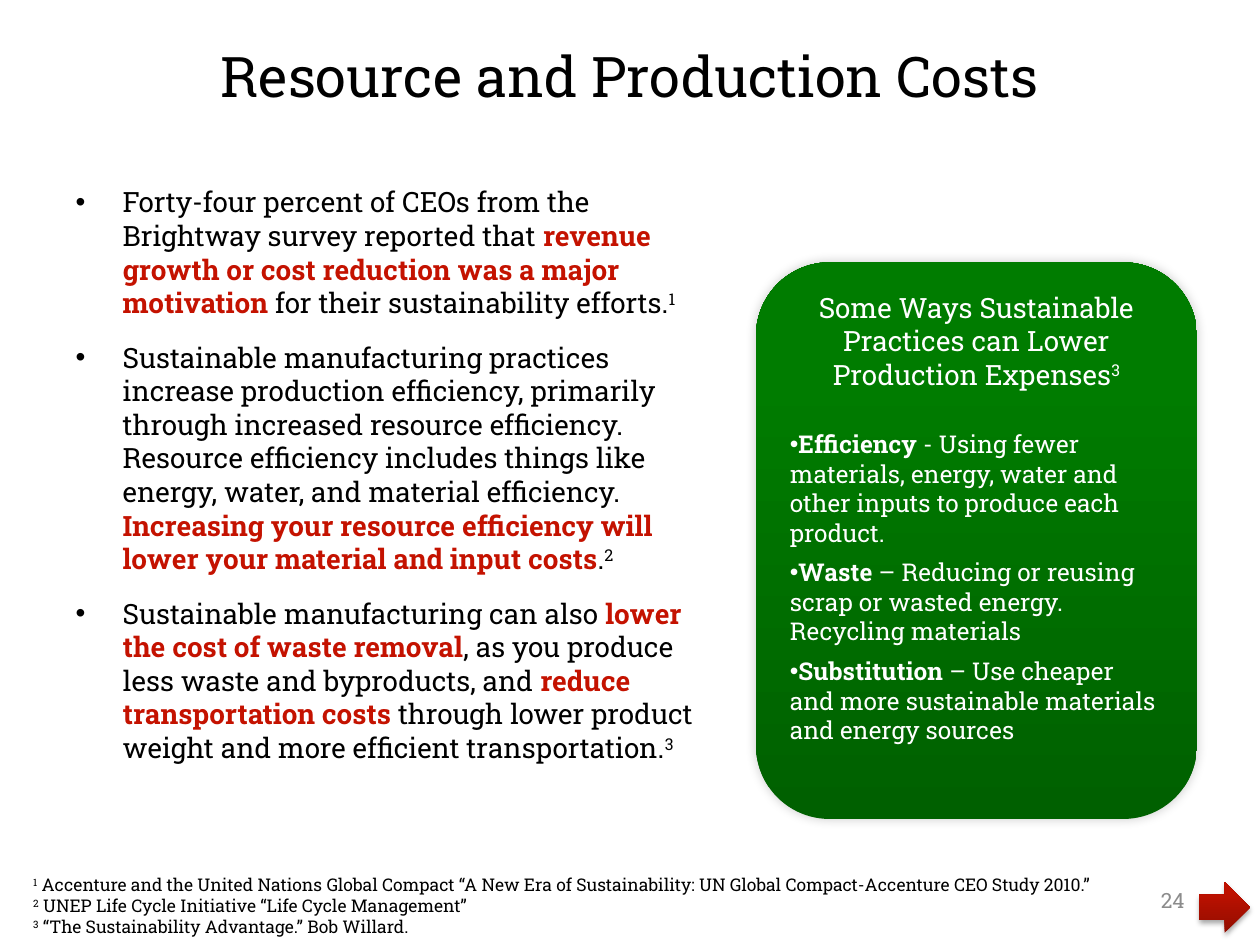
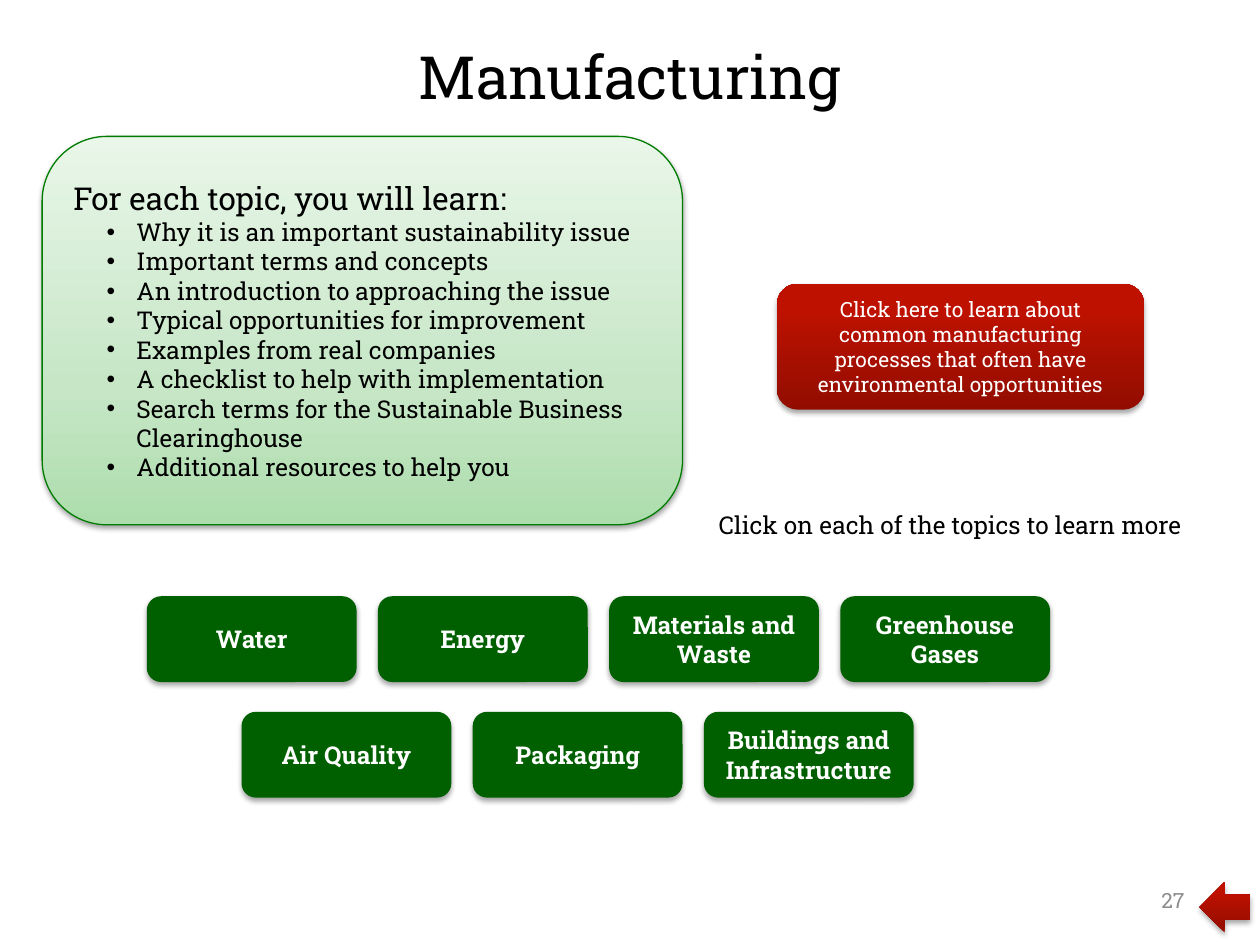
"""Build two slides on sustainable manufacturing: cost savings and a topic menu."""
from dataclasses import dataclass

from lxml import etree
from pptx import Presentation
from pptx.dml.color import RGBColor
from pptx.enum.shapes import MSO_SHAPE
from pptx.enum.text import MSO_ANCHOR, MSO_AUTO_SIZE, PP_ALIGN
from pptx.oxml.ns import qn
from pptx.util import Cm, Pt

LEFT, CENTER, RIGHT = PP_ALIGN.LEFT, PP_ALIGN.CENTER, PP_ALIGN.RIGHT
TOP, MIDDLE = MSO_ANCHOR.TOP, MSO_ANCHOR.MIDDLE
ROUNDED = MSO_SHAPE.ROUNDED_RECTANGLE
NEXT, BACK = MSO_SHAPE.RIGHT_ARROW, MSO_SHAPE.LEFT_ARROW
NO_AUTO_SIZE = MSO_AUTO_SIZE.NONE


@dataclass(frozen=True)
class Theme:
    font: str = "Roboto Slab"
    text: str = "000000"
    light: str = "FFFFFF"
    muted: str = "8C8C8C"
    accent: str = "C41200"
    button: str = "006000"
    outline: str = "007D00"
    red: tuple = ((0, "920D00"), (80, "BE1100"), (100, "BF1200"))
    green: tuple = ((0, "006000"), (80, "007C00"), (100, "007D00"))
    pale: tuple = ((0, "ADDDAD"), (35, "C6E6C6"), (100, "E9F6E9"))
    soft: tuple = (35, 3.1, 1.8, 90)
    glow: tuple = (20, 6, 0, 315)
    lead: int = 18
    body: int = 16
    label: int = 14
    small: int = 12
    note: int = 10


THEME = Theme()

COSTS_TITLE = "Resource and Production Costs"
COSTS_POINTS = [
    [("Forty-four percent of CEOs from the Brightway survey reported that ", ""),
     ("revenue growth or cost reduction was a major motivation", "key"),
     (" for their sustainability efforts.", ""), ("1", "raised")],
    [("Sustainable manufacturing practices increase production efficiency, "
      "primarily through increased resource efficiency. Resource efficiency "
      "includes things like energy, water, and material efficiency. ", ""),
     ("Increasing your resource efficiency will lower your material and input costs", "key"),
     (".", ""), ("2", "raised")],
    [("Sustainable manufacturing can also ", ""),
     ("lower the cost of waste removal", "key"),
     (", as you produce less waste and byproducts, and ", ""),
     ("reduce transportation costs ", "key"),
     ("through lower product weight and more efficient transportation.", ""),
     ("3", "raised")],
]
WAYS_HEADING = [("Some Ways Sustainable Practices can Lower Production Expenses", ""),
                ("3", "raised")]
WAYS = [
    ("Efficiency", " - Using fewer materials, energy, water and other inputs "
                   "to produce each product."),
    ("Waste", " – Reducing or reusing scrap or wasted energy. Recycling materials"),
    ("Substitution", " – Use cheaper and more sustainable materials and energy sources"),
]
SOURCES = [
    " Accenture and the United Nations Global Compact “A New Era of Sustainability: "
    "UN Global Compact-Accenture CEO Study 2010.”",
    " UNEP Life Cycle Initiative “Life Cycle Management”",
    " “The Sustainability Advantage.” Bob Willard.",
]

MENU_TITLE = "Manufacturing"
LEARN_HEADING = "For each topic, you will learn:"
LEARN_POINTS = [
    "Why it is an important sustainability issue",
    "Important terms and concepts",
    "An introduction to approaching the issue",
    "Typical opportunities for improvement",
    "Examples from real companies",
    "A checklist to help with implementation",
    "Search terms for the Sustainable Business Clearinghouse",
    "Additional resources to help you",
]
PROCESS_LINK = ("Click here to learn about common manufacturing processes "
                "that often have environmental opportunities")
TOPIC_HINT = "Click on each of the topics to learn more"
TOPIC_ROWS = [
    (2.96, ["Water", "Energy", "Materials and Waste", "Greenhouse Gases"]),
    (4.87, ["Air Quality", "Packaging", "Buildings and Infrastructure"]),
]
TOPIC_TOP, TOPIC_WIDTH, TOPIC_HEIGHT = 12.02, 4.23, 1.73
COLUMN_PITCH, ROW_PITCH = 4.66, 2.33


def write(frame, content, *, size, color=THEME.text, bold=False, align=LEFT,
          bullet=False, margin=0, indent=0, before=0, after=0):
    """Add one paragraph made of a string or of (text, style) spans."""
    para = frame.paragraphs[0]
    if para.runs:
        para = frame.add_paragraph()
    properties = para._p.get_or_add_pPr()
    properties.set("marL", str(Cm(margin)))
    properties.set("indent", str(Cm(indent)))
    if bullet:
        etree.SubElement(properties, qn("a:buFont"), typeface="Arial")
        etree.SubElement(properties, qn("a:buChar"), char="•")
    else:
        etree.SubElement(properties, qn("a:buNone"))
    para.alignment = align
    para.space_before, para.space_after = Pt(before), Pt(after)
    spans = [(content, "")] if isinstance(content, str) else content
    for text, style in spans:
        span = para.add_run()
        span.text = text
        span.font.name, span.font.size = THEME.font, Pt(size)
        span.font.bold = bold or style in ("key", "bold")
        span.font.color.rgb = RGBColor.from_string(THEME.accent if style == "key" else color)
        if style == "raised":
            span._r.get_or_add_rPr().set("baseline", "30000")


def place(shape, left, top, width, height):
    """Move and size a placeholder in centimetres and return its text frame."""
    shape.left, shape.top, shape.width, shape.height = map(Cm, (left, top, width, height))
    shape.text_frame.auto_size = NO_AUTO_SIZE
    return shape.text_frame


def add_text_box(page, *place_in_cm, anchor=TOP):
    """Add a wrapping text box and return its text frame."""
    frame = page.shapes.add_textbox(*map(Cm, place_in_cm)).text_frame
    frame.word_wrap = True
    frame.vertical_anchor = anchor
    return frame


def add_panel(page, kind, *place_in_cm, fill, shadow=THEME.soft, line=None, anchor=MIDDLE):
    """Add a shadowed shape with a solid or graded fill and return its text frame."""
    panel = page.shapes.add_shape(kind, *map(Cm, place_in_cm))
    if isinstance(fill, str):
        panel.fill.solid()
        panel.fill.fore_color.rgb = RGBColor.from_string(fill)
    else:
        panel.fill.gradient()
        panel.fill.gradient_angle = 90
        stops = panel._element.spPr.find(".//" + qn("a:gsLst"))
        for stop in list(stops):
            stops.remove(stop)
        for position, color in fill:
            stop = etree.SubElement(stops, qn("a:gs"), pos=str(position * 1000))
            etree.SubElement(stop, qn("a:srgbClr"), val=color)
    if line:
        panel.line.color.rgb = RGBColor.from_string(line)
        panel.line.width = Pt(0.75)
    else:
        panel.line.fill.background()
    panel.shadow.inherit = False
    alpha, blur, distance, angle = shadow
    effects = panel._element.spPr.find(qn("a:effectLst"))
    outer = etree.SubElement(effects, qn("a:outerShdw"), blurRad=str(Pt(blur)),
                             dist=str(Pt(distance)), dir=str(angle * 60000),
                             rotWithShape="0")
    color = etree.SubElement(outer, qn("a:srgbClr"), val="000000")
    etree.SubElement(color, qn("a:alpha"), val=str(alpha * 1000))
    panel.text_frame.vertical_anchor = anchor
    return panel.text_frame


def add_page(deck, title, title_size, number, arrow):
    """Add a slide with its title, number and navigation arrow."""
    page = deck.slides.add_slide(deck.slide_layouts[1])
    frame = place(page.shapes.title, 1.27, 0.42, 22.86, 2.2)
    frame.vertical_anchor = MIDDLE
    write(frame, title, size=title_size, align=CENTER)
    write(add_text_box(page, 18.2, 17.64, 5.93, 1.01, anchor=MIDDLE), str(number),
          size=THEME.small, color=THEME.muted, align=RIGHT)
    add_panel(page, arrow, 24.18, 17.78, 1.02, 1.02, fill=THEME.red)
    return page


def build_costs(deck):
    """Build the slide on resource and production costs."""
    page = add_page(deck, COSTS_TITLE, 32, 24, NEXT)
    points = place(page.placeholders[1], 1.27, 3.6, 13.12, 13.76)
    for point in COSTS_POINTS:
        write(points, point, size=THEME.body, bullet=True, margin=0.95, indent=-0.95, after=12)

    notes = add_text_box(page, 0.42, 17.5, 23.94, 1.55)
    for number, source in enumerate(SOURCES, 1):
        write(notes, [(str(number), "raised"), (source, "")], size=THEME.note)

    ways = add_panel(page, ROUNDED, 15.24, 5.29, 8.89, 11.22, fill=THEME.green,
                     shadow=THEME.glow, anchor=TOP)
    write(ways, WAYS_HEADING, size=THEME.body, color=THEME.light, align=CENTER)
    for index, (name, detail) in enumerate(WAYS):
        write(ways, [(name, "bold"), (detail, "")], size=THEME.label, color=THEME.light,
              bullet=True, before=0 if index else 22, after=6)


def build_menu(deck):
    """Build the slide that introduces the manufacturing topics."""
    page = add_page(deck, MENU_TITLE, 34, 27, BACK)
    hint = place(page.placeholders[1], 14.18, 10.16, 9.95, 0.84)
    write(hint, TOPIC_HINT, size=THEME.label, align=CENTER)

    learn = add_panel(page, ROUNDED, 0.85, 2.75, 12.91, 7.83, fill=THEME.pale,
                      shadow=(38, 3.1, 1.6, 90), line=THEME.outline)
    write(learn, LEARN_HEADING, size=THEME.lead)
    for point in LEARN_POINTS:
        write(learn, point, size=THEME.label, bullet=True, margin=1.27, indent=-0.6)

    link = add_panel(page, ROUNDED, 15.66, 5.72, 7.41, 2.54, fill=THEME.red)
    write(link, PROCESS_LINK, size=THEME.small, color=THEME.light, align=CENTER)

    for row, (start, topics) in enumerate(TOPIC_ROWS):
        for column, topic in enumerate(topics):
            button = add_panel(page, ROUNDED, start + column * COLUMN_PITCH,
                               TOPIC_TOP + row * ROW_PITCH, TOPIC_WIDTH, TOPIC_HEIGHT,
                               fill=THEME.button)
            write(button, topic, size=THEME.label, color=THEME.light, bold=True, align=CENTER)


def main():
    """Create the deck and save it."""
    deck = Presentation()
    deck.slide_width, deck.slide_height = Cm(25.4), Cm(19.05)
    build_costs(deck)
    build_menu(deck)
    deck.save("out.pptx")


if __name__ == "__main__":
    main()
